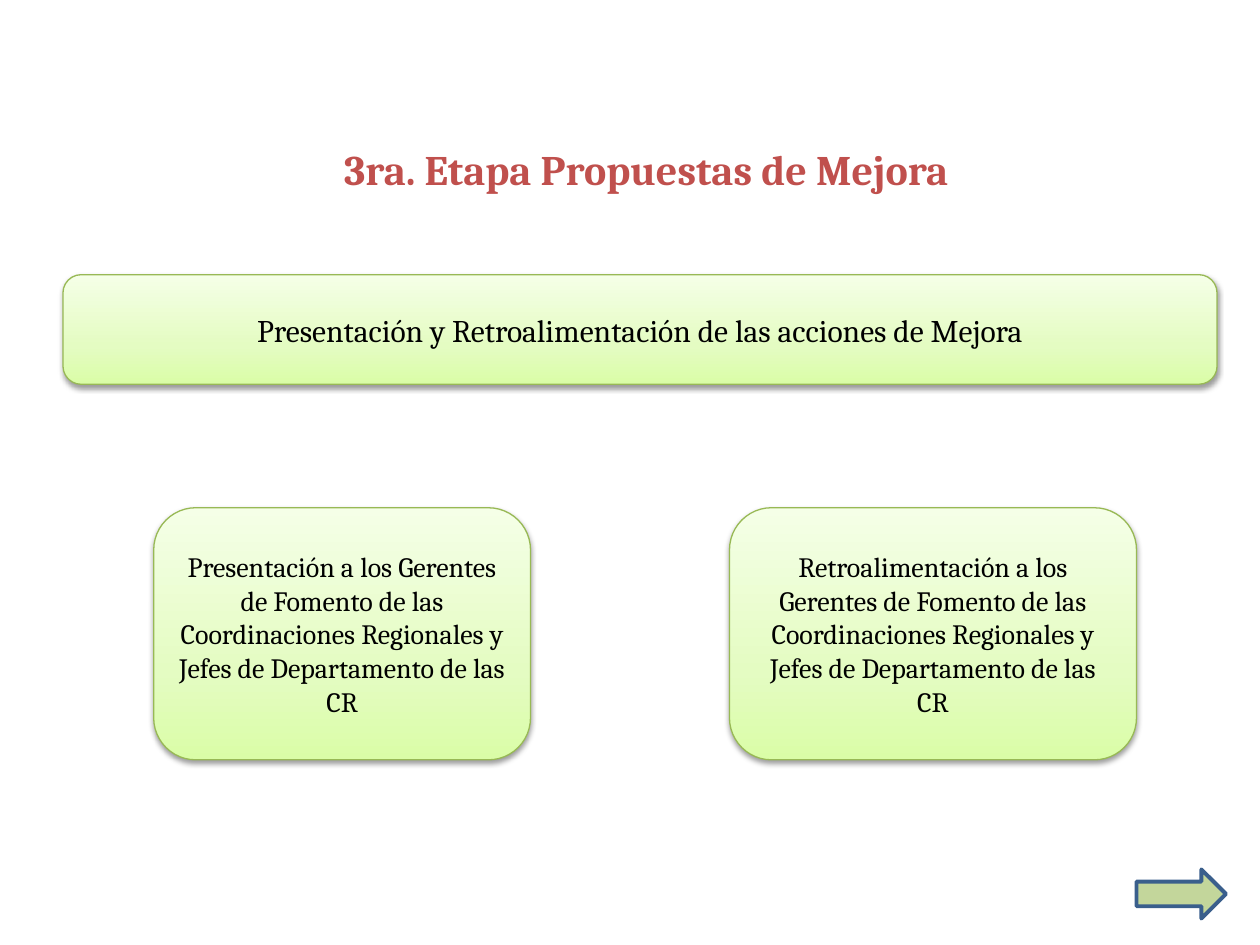
from dataclasses import dataclass

from lxml import etree
from pptx import Presentation
from pptx.dml.color import RGBColor
from pptx.enum.shapes import MSO_SHAPE
from pptx.enum.text import MSO_ANCHOR, PP_ALIGN
from pptx.oxml.ns import qn
from pptx.util import Inches, Pt

ROUNDED = MSO_SHAPE.ROUNDED_RECTANGLE
RIGHT_ARROW = MSO_SHAPE.RIGHT_ARROW
CENTER = PP_ALIGN.CENTER
MIDDLE = MSO_ANCHOR.MIDDLE

# Content; each place is left, top, width, height in percent of the slide
TITLE = "3ra. Etapa Propuestas de Mejora "
TITLE_PLACE = (9.9, 14.53, 83.5, 6.67)
ARROW_PLACE = (90.2, 92, 7.1, 5.2)
ACTIONS_TOP, ACTIONS_HEIGHT = 53.73, 26.67
AUDIENCE = ("Gerentes de Fomento de las Coordinaciones Regionales "
            "y Jefes de Departamento de las CR")
CARDS = [
    ("Presentación y Retroalimentación de las acciones de Mejora",
     (5, 29.07, 91.6, 11.6), 18),
    (f"Presentación a los {AUDIENCE}",
     (12.2, ACTIONS_TOP, 29.9, ACTIONS_HEIGHT), 16),
    (f"Retroalimentación a los {AUDIENCE}",
     (57.9, ACTIONS_TOP, 32.3, ACTIONS_HEIGHT), 16),
]


@dataclass(frozen=True)
class Theme:
    font: str = "Cambria"
    title_size: int = 24
    title: str = "C0504D"
    text: str = "000000"
    card_stops: tuple = ((0, "DAFDA7"), (35, "E4FCC2"), (100, "F5FFE7"))
    card_line: str = "98B955"
    shadow: str = "000000"
    arrow_fill: str = "C3D69B"
    arrow_line: str = "3A5F8C"


theme = Theme()
deck = Presentation()
deck.slide_width, deck.slide_height = Inches(10), Inches(7.5)
slide = deck.slides.add_slide(deck.slide_layouts[6])


def locate(place):
    sides = (deck.slide_width, deck.slide_height) * 2
    return [round(side * share / 100) for side, share in zip(sides, place)]


def write(frame, words, size, color, bold=False):
    frame.word_wrap = True
    paragraph = frame.paragraphs[0]
    paragraph.alignment = CENTER
    run = paragraph.add_run()
    run.text = words
    run.font.name = theme.font
    run.font.size = Pt(size)
    run.font.bold = bold
    run.font.color.rgb = RGBColor.from_string(color)


def add_outlined(kind, place, color, width):
    outlined = slide.shapes.add_shape(kind, *locate(place))
    outlined.shadow.inherit = False
    outlined.line.color.rgb = RGBColor.from_string(color)
    outlined.line.width = Pt(width)
    return outlined


def add_child(parent, tag, **attributes):
    values = {key: str(value) for key, value in attributes.items()}
    return etree.SubElement(parent, qn(tag), values)


def add_color(parent, color, opacity=100):
    entry = add_child(parent, "a:srgbClr", val=color)
    if opacity < 100:
        add_child(entry, "a:alpha", val=opacity * 1000)


def add_card(words, place, size):
    card = add_outlined(ROUNDED, place, theme.card_line, 0.75)
    properties = card._element.spPr

    # Gradient rising from the bottom edge
    gradient = etree.Element(qn("a:gradFill"), rotWithShape="1")
    stops = add_child(gradient, "a:gsLst")
    for position, color in theme.card_stops:
        add_color(add_child(stops, "a:gs", pos=position * 1000), color)
    add_child(gradient, "a:lin", ang=270 * 60000, scaled=0)
    properties.find(qn("a:prstGeom")).addnext(gradient)

    # Soft shadow falling straight down
    shadow = add_child(properties.find(qn("a:effectLst")), "a:outerShdw",
                       blurRad=Pt(3.1), dist=Pt(1.6), dir=90 * 60000,
                       rotWithShape=0)
    add_color(shadow, theme.shadow, 38)

    card.text_frame.vertical_anchor = MIDDLE
    write(card.text_frame, words, size, theme.text)


# Title
heading = slide.shapes.add_textbox(*locate(TITLE_PLACE))
write(heading.text_frame, TITLE, theme.title_size, theme.title, bold=True)

# Stage and its two actions
for words, place, size in CARDS:
    add_card(words, place, size)

# Arrow to the next stage
next_arrow = add_outlined(RIGHT_ARROW, ARROW_PLACE, theme.arrow_line, 2.25)
next_arrow.fill.solid()
next_arrow.fill.fore_color.rgb = RGBColor.from_string(theme.arrow_fill)

deck.save("out.pptx")
